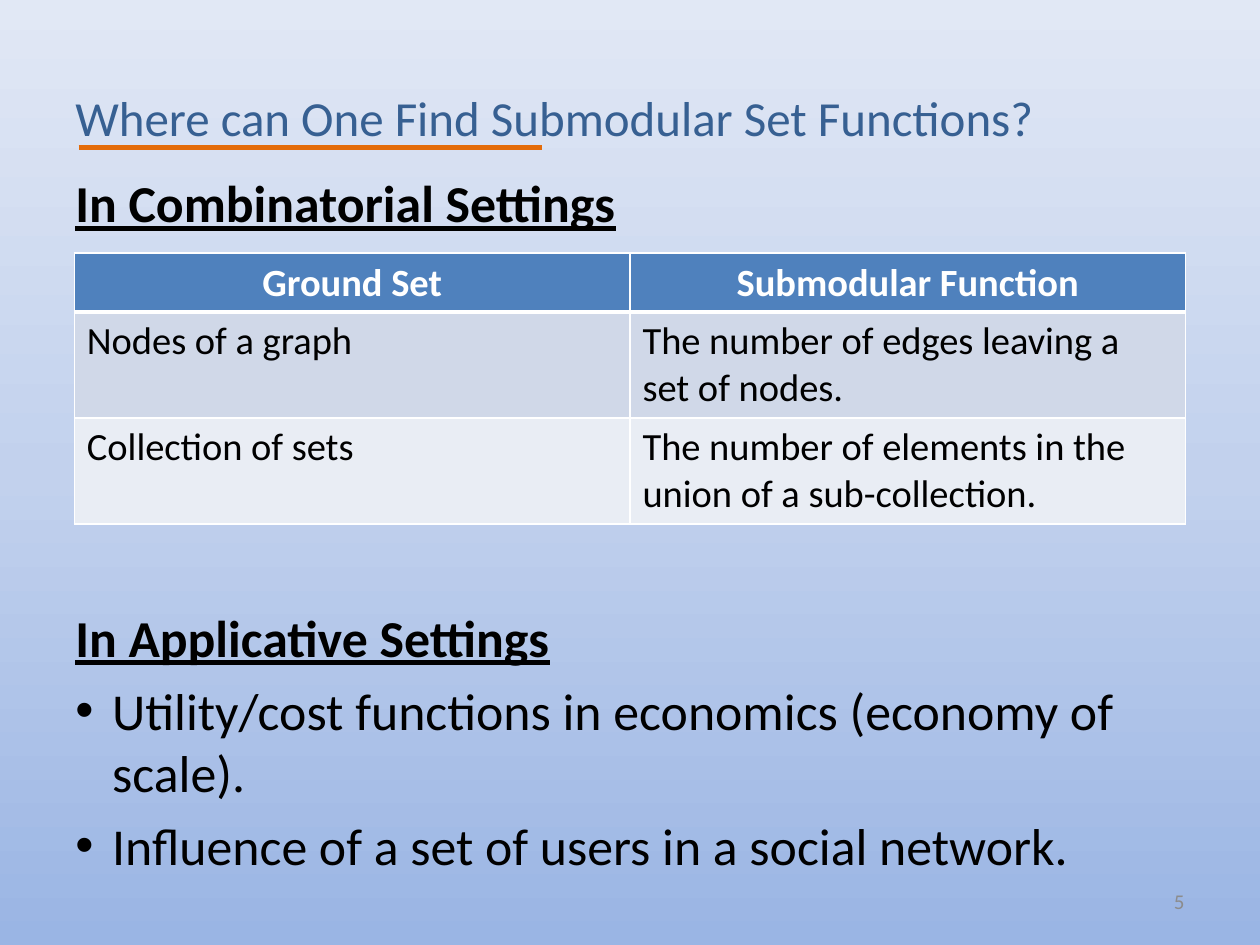
import copy
import lxml.etree
import pptx
import pptx.dml.color
import pptx.enum.shapes
import pptx.enum.text
import pptx.oxml.ns
import pptx.util

Pt = pptx.util.Pt
qn = pptx.oxml.ns.qn
ALIGN = pptx.enum.text.PP_ALIGN
ANCHOR = pptx.enum.text.MSO_ANCHOR
HUES = {
    "low": "9AB5E4", "mid": "C2D1ED", "high": "E1E8F5",
    "title": "376092", "rule": "E46C0A", "text": "000000", "page": "8C8C8C",
    "head": "4F81BD", "odd": "D0D8E8", "even": "E9EDF4", "white": "FFFFFF",
}


def hue(name):
    return pptx.dml.color.RGBColor.from_string(HUES[name])


def write(para, text, color, align=ALIGN.LEFT, **form):
    para.alignment = align
    run = para.add_run()
    run.text = text
    run.font.color.rgb = hue(color)
    for key, value in {"name": "Calibri", **form}.items():
        setattr(run.font, key, value)


deck = pptx.Presentation()
deck.slide_width, deck.slide_height = Pt(720), Pt(540)
slide = deck.slides.add_slide(deck.slide_layouts[6])

fill = slide.background.fill
fill.gradient()
fill.gradient_angle = 90
stops = slide.element.find(".//" + qn("a:gsLst"))
stops.append(copy.deepcopy(stops[-1]))
for stop, place, name in zip(fill.gradient_stops, (0, 0.5, 1), ("low", "mid", "high")):
    stop.position = place
    stop.color.rgb = hue(name)

rule = slide.shapes.add_connector(
    pptx.enum.shapes.MSO_CONNECTOR.STRAIGHT, Pt(45), Pt(84.25), Pt(309.5), Pt(84.25))
rule.line.color.rgb = hue("rule")
rule.line.width = Pt(3)
lxml.etree.SubElement(rule.element.spPr, qn("a:effectLst"))

frames = []
for box, anchor in (
    ((36, 21.6, 648, 90), ANCHOR.MIDDLE),
    ((36, 94.3, 648, 391), ANCHOR.TOP),
    ((516, 500.5, 168, 28.8), ANCHOR.MIDDLE),
):
    frame = slide.shapes.add_textbox(*map(Pt, box)).text_frame
    frame.word_wrap = True
    frame.vertical_anchor = anchor
    frames.append(frame)
title, body, page = frames

write(title.paragraphs[0], "Where can One Find Submodular Set Functions?", "title", size=Pt(28))
write(page.paragraphs[0], "5", "page", ALIGN.RIGHT, size=Pt(12))

lines = (
    ("In Combinatorial Settings", True, 0),
    ("In Applicative Settings", True, 213),
    ("Utility/cost functions in economics (economy of scale).", False, 6),
    ("Influence of a set of users in a social network.", False, 6),
)
for spot, (text, head, gap) in enumerate(lines):
    para = body.add_paragraph() if spot else body.paragraphs[0]
    para.space_before = Pt(gap)
    write(para, text, "text", size=Pt(29.6), bold=head, underline=head)
    if not head:
        props = para._p.get_or_add_pPr()
        props.set("marL", str(Pt(21)))
        props.set("indent", str(-Pt(21)))
        font = lxml.etree.SubElement(props, qn("a:buFont"))
        font.set("typeface", "Arial")
        mark = lxml.etree.SubElement(props, qn("a:buChar"))
        mark.set("char", "•")

rows = (
    ("head", 33.5, ("Ground Set", "Submodular Function")),
    ("odd", 60.5, ("Nodes of a graph", "The number of edges leaving a set of nodes.")),
    ("even", 60.5, ("Collection of sets",
                    "The number of elements in the union of a sub-collection.")),
)
table = slide.shapes.add_table(3, 2, Pt(42.5), Pt(144.7), Pt(635), Pt(154.5)).table
for y, (shade, height, texts) in enumerate(rows):
    table.rows[y].height = Pt(height)
    head = y == 0
    for x, text in enumerate(texts):
        cell = table.cell(y, x)
        write(cell.text_frame.paragraphs[0], text, "white" if head else "text",
              ALIGN.CENTER if head else ALIGN.LEFT, size=Pt(22), bold=head)
        props = cell._tc.get_or_add_tcPr()
        thick = {"lnB": 3} if head else {"lnT": 3} if y == 1 else {}
        for side in ("lnL", "lnR", "lnT", "lnB"):
            edge = lxml.etree.SubElement(props, qn("a:" + side))
            edge.set("w", str(Pt(thick.get(side, 1))))
            solid = lxml.etree.SubElement(edge, qn("a:solidFill"))
            lxml.etree.SubElement(solid, qn("a:srgbClr")).set("val", HUES["white"])
        cell.fill.solid()
        cell.fill.fore_color.rgb = hue(shade)

deck.save("out.pptx")
